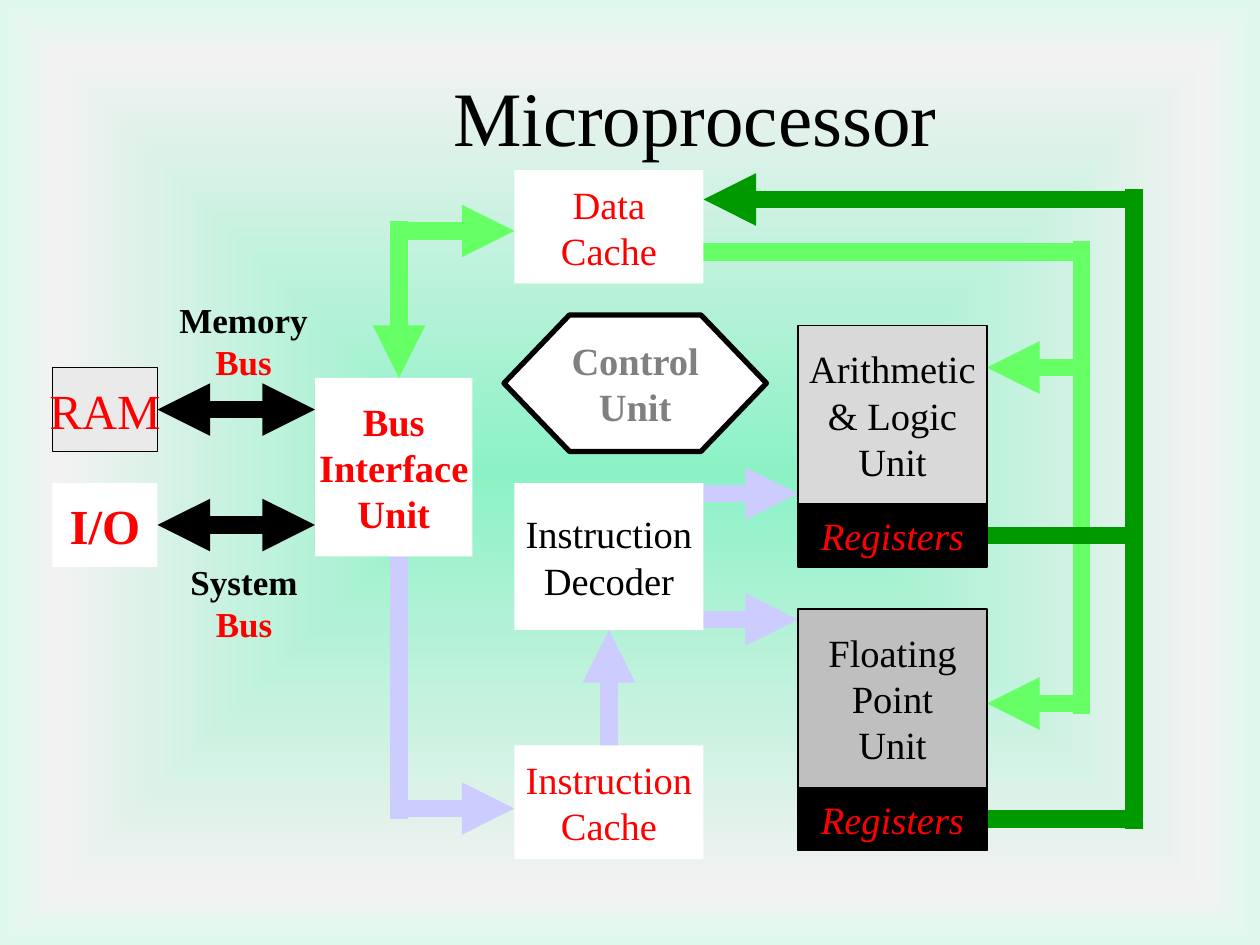
"""Builds a slide showing the functional units and buses of a microprocessor."""
from pptx import Presentation
from pptx.dml.color import RGBColor
from pptx.enum.shapes import MSO_CONNECTOR, MSO_SHAPE
from pptx.enum.text import MSO_ANCHOR, PP_ALIGN
from pptx.oxml import parse_xml
from pptx.oxml.ns import nsdecls, qn
from pptx.util import Inches, Pt

RECTANGLE, HEXAGON = MSO_SHAPE.RECTANGLE, MSO_SHAPE.HEXAGON
STRAIGHT = MSO_CONNECTOR.STRAIGHT
MIDDLE, CENTER, LEFT = MSO_ANCHOR.MIDDLE, PP_ALIGN.CENTER, PP_ALIGN.LEFT

COLUMNS, ROWS = 120, 90
CELL = Inches(10) // COLUMNS
FONT = "Times New Roman"
COLORS = {
    "black": "000000", "white": "FFFFFF", "red": "FF0000", "gray": "808080",
    "pale": "EAEAEA", "light": "D9D9D9", "medium": "BFBFBF",
    "instruction": "CCCCFF", "data": "66FF66", "result": "009900",
}
BACKGROUND_STOPS = [(0, "8CF2C6"), (88, "F2F2F2"), (100, "DEF9EC")]

# Grid cells: start column, start row, end column, end row, arrowheads
BUSES = {
    "instruction": [
        (38, 53, 38, 78, ""), (38, 77, 49, 77, "end"), (58, 72, 58, 60, "end"),
        (67, 47, 76, 47, "end"), (67, 59, 76, 59, "end"),
    ],
    "data": [
        (38, 21, 38, 36, "end"), (38, 22, 49, 22, "end"), (67, 24, 103, 24, ""),
        (103, 23, 103, 68, ""), (103, 35, 94, 35, "end"), (103, 67, 94, 67, "end"),
    ],
    "result": [
        (94, 51, 108, 51, ""), (94, 78, 108, 78, ""),
        (108, 18, 108, 79, ""), (108, 19, 67, 19, "end"),
    ],
    "black": [(15, 39, 30, 39, "both"), (15, 50, 30, 50, "both")],
}

# Lines, grid cells, fill, outline points, text color, size, style
UNITS = [
    (["Data", "Cache"], (49, 16.2, 18, 10.8), "white", 0, "red", 22, ""),
    (["Bus", "Interface", "Unit"], (30, 36, 15, 17), "white", 0, "red", 22, "bold"),
    (["Instruction", "Decoder"], (49, 46, 18, 14), "white", 0, "black", 22, ""),
    (["Instruction", "Cache"], (49, 71, 18, 10.8), "white", 0, "red", 22, ""),
    (["RAM"], (5, 35, 10, 8), "pale", 0.75, "red", 28, ""),
    (["I/O"], (5, 46, 10, 8), "white", 0, "red", 28, "bold"),
    (["Control", "Unit"], (48, 30, 25, 13), "white", 3, "gray", 22, "bold"),
]
EXECUTION_UNITS = [
    (["Arithmetic", "& Logic", "Unit"], 31, "light"),
    (["Floating", "Point", "Unit"], 58, "medium"),
]
for lines, row, fill in EXECUTION_UNITS:
    UNITS += [
        (lines, (76, row, 18, 17), fill, 0.75, "black", 22, ""),
        (["Registers"], (76, row + 17, 18, 6), "black", 0.75, "red", 22, "italic"),
    ]

BUS_LABELS = [("Memory", (15.6, 27.8, 15.2, 9.2)), ("System", (16.9, 52.8, 12.7, 9.2))]


def color(name):
    return RGBColor.from_string(COLORS[name])


def cells(*values):
    return [round(value * CELL) for value in values]


def set_background(slide):
    stops = "".join(
        f'<a:gs pos="{position * 1000}"><a:srgbClr val="{value}"/></a:gs>'
        for position, value in BACKGROUND_STOPS
    )
    slide.element.find(qn("p:cSld")).insert(0, parse_xml(
        f'<p:bg {nsdecls("p", "a")}><p:bgPr><a:gradFill rotWithShape="0">'
        f'<a:gsLst>{stops}</a:gsLst><a:path path="shape">'
        '<a:fillToRect l="50000" t="50000" r="50000" b="50000"/></a:path>'
        '</a:gradFill><a:effectLst/></p:bgPr></p:bg>'
    ))


def write_lines(frame, lines, colors, size, style="", alignment=CENTER):
    frame.text = "\n".join(lines)
    for paragraph, name in zip(frame.paragraphs, colors):
        paragraph.alignment = alignment
        font = paragraph.font
        font.name, font.size = FONT, Pt(size)
        font.bold, font.italic = style == "bold", style == "italic"
        font.color.rgb = color(name)


def add_bus(slide, name, start_x, start_y, end_x, end_y, heads):
    bus = slide.shapes.add_connector(STRAIGHT, *cells(start_x, start_y, end_x, end_y))
    bus.line.color.rgb = color(name)
    bus.line.width = Pt(10)
    outline = bus.line._get_or_add_ln()
    tags = {"": [], "end": ["tailEnd"], "both": ["headEnd", "tailEnd"]}[heads]
    for tag in tags:
        outline.append(parse_xml(f'<a:{tag} {nsdecls("a")} type="triangle"/>'))
    outline.getparent().append(parse_xml(f'<a:effectLst {nsdecls("a")}/>'))


def add_unit(slide, lines, area, fill, outline, text_color, size, style):
    is_control = lines[0] == "Control"
    unit = slide.shapes.add_shape(HEXAGON if is_control else RECTANGLE, *cells(*area))
    if is_control:
        unit.adjustments[0] = 0.48
    unit.shadow.inherit = False
    unit.fill.solid()
    unit.fill.fore_color.rgb = color(fill)
    if outline:
        unit.line.color.rgb = color("black")
        unit.line.width = Pt(outline)
    else:
        unit.line.fill.background()
    frame = unit.text_frame
    frame.word_wrap = False
    frame.vertical_anchor = MIDDLE
    write_lines(frame, lines, [text_color] * len(lines), size, style)


def main():
    presentation = Presentation()
    presentation.slide_width, presentation.slide_height = cells(COLUMNS, ROWS)
    slide = presentation.slides.add_slide(presentation.slide_layouts[6])
    set_background(slide)
    for name, buses in BUSES.items():
        for bus in buses:
            add_bus(slide, name, *bus)
    for unit in UNITS:
        add_unit(slide, *unit)
    title = slide.shapes.add_textbox(*cells(42, 6, 54, 10)).text_frame
    title.word_wrap = True
    write_lines(title, ["Microprocessor"], ["black"], 44, alignment=LEFT)
    for label, area in BUS_LABELS:
        frame = slide.shapes.add_textbox(*cells(*area)).text_frame
        frame.word_wrap = False
        write_lines(frame, [label, "Bus"], ["black", "red"], 20, "bold")
    presentation.save("out.pptx")


if __name__ == "__main__":
    main()
